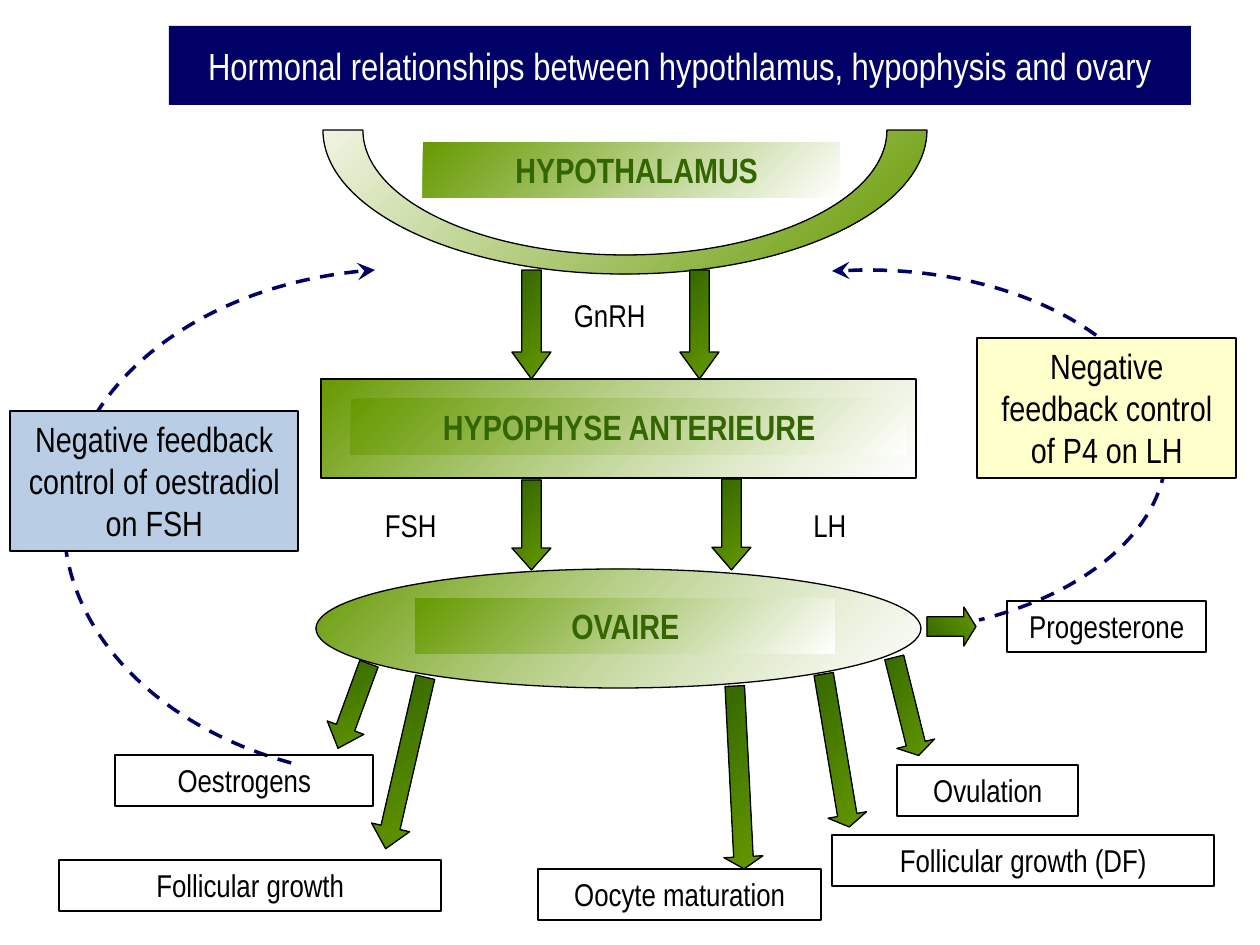
from lxml.etree import SubElement
from pptx import Presentation
from pptx.dml.color import RGBColor
from pptx.enum.dml import MSO_LINE
from pptx.enum.shapes import MSO_SHAPE
from pptx.enum.text import MSO_ANCHOR, PP_ALIGN
from pptx.oxml.ns import qn
from pptx.util import Pt

UNIT = 914400 / 126
FONT = "Arial Narrow"
COLORS = {
    "navy": "000066", "white": "FFFFFF", "black": "000000", "green": "669900",
    "dark": "336600", "cream": "FFFFCC", "blue": "B9CDE5", "mist": "F0F4E2",
}


def px(num):
    """Turn pixels into EMU."""
    return round(num * UNIT)


def rgb(name):
    """Look up a colour by name."""
    return RGBColor.from_string(COLORS[name])


def edge(shape, color="black", width=0.75):
    """Set the outline, or remove it when there is no colour."""
    shape.shadow.inherit = False
    if color:
        shape.line.color.rgb = rgb(color)
        shape.line.width = Pt(width)
    else:
        shape.line.fill.background()


def paint(shape, color):
    """Fill with one colour, or with nothing."""
    if color:
        shape.fill.solid()
        shape.fill.fore_color.rgb = rgb(color)
    else:
        shape.fill.background()


def blend(shape, first, last, alpha=100):
    """Fill with a diagonal gradient whose white stop may be see-through."""
    shape.fill.gradient()
    shape.fill.gradient_angle = 315
    for stop, name in zip(shape.fill.gradient_stops, (first, last)):
        stop.color.rgb = rgb(name)
    for node in shape._element.spPr.iter(qn("a:srgbClr")):
        if alpha < 100 and node.get("val") == COLORS["white"]:
            SubElement(node, qn("a:alpha"), val=str(alpha * 1000))


def form(slide, kind, at):
    """Add a preset shape at a pixel frame."""
    return slide.shapes.add_shape(kind, *map(px, at))


def write(shape, text, size, color="black", bold=False, pad=13, anchor=MSO_ANCHOR.TOP):
    """Write one centred paragraph into a shape."""
    frame = shape.text_frame
    frame.word_wrap = True
    frame.vertical_anchor = anchor
    frame.margin_left = px(pad)
    para = frame.paragraphs[0]
    para.alignment = PP_ALIGN.CENTER
    run = para.add_run()
    run.text = text
    run.font.name = FONT
    run.font.size = Pt(size)
    run.font.bold = bold
    run.font.color.rgb = rgb(color)


def box(slide, text, at, size=18, fill=None):
    """Add a text box with an outline."""
    shape = form(slide, MSO_SHAPE.RECTANGLE, at)
    paint(shape, fill)
    edge(shape)
    write(shape, text, size)


def note(slide, text, at):
    """Add a bare hormone name."""
    area = slide.shapes.add_textbox(*map(px, at))
    write(area, text, 18)


def organ(slide, kind, at, alpha):
    """Add an outlined organ that fades to white."""
    shape = form(slide, kind, at)
    blend(shape, "green", "white", alpha)
    edge(shape)


def label(slide, text, at, pad=13):
    """Add the name plate of an organ."""
    shape = form(slide, MSO_SHAPE.RECTANGLE, at)
    blend(shape, "green", "white")
    edge(shape, None)
    write(shape, text, 20, "dark", True, pad)


def arrow(slide, left, top, high, head, turn=0):
    """Add a green block arrow."""
    shape = form(slide, MSO_SHAPE.DOWN_ARROW, (left, top, 39, high))
    shape.adjustments[0] = 0.5
    shape.adjustments[1] = head
    shape.rotation = turn
    blend(shape, "dark", "green")
    edge(shape)


def trace(slide, start, parts, close=False):
    """Add a freeform whose parts are lines of one point or curves of three."""
    pen = slide.shapes.build_freeform(*start, scale=UNIT)
    pen.add_line_segments([spot for part in parts for spot in part], close=close)
    shape = pen.convert_to_shape()
    nodes = iter(list(shape._element.spPr.iter(qn("a:lnTo"))))
    for part in parts:
        group = [next(nodes) for _ in part]
        if len(group) == 3:
            bend = group[0].makeelement(qn("a:cubicBezTo"))
            group[0].addprevious(bend)
            for node in group:
                bend.append(node[0])
                node.getparent().remove(node)
    return shape


def bowl(slide):
    """Add the half ring of the hypothalamus."""
    shape = trace(slide, (887, 130), [
        [(887, 199), (770, 255), (625, 255)],
        [(480, 255), (363, 199), (363, 130)],
        [(323, 130)],
        [(323, 209), (457, 274), (625, 274)],
        [(793, 274), (927, 209), (927, 130)],
    ], True)
    blend(shape, "mist", "green")
    edge(shape)


def loop(slide, start, parts):
    """Add a dashed feedback curve with its arrowhead at the start."""
    shape = trace(slide, start, parts)
    paint(shape, None)
    edge(shape, "navy", 2)
    shape.line.dash_style = MSO_LINE.DASH
    line = shape._element.spPr.find(qn("a:ln"))
    SubElement(line, qn("a:headEnd"), type="stealth", w="lg", len="lg")


def main():
    """Build the slide."""
    deck = Presentation()
    deck.slide_width, deck.slide_height = px(1260), px(945)
    slide = deck.slides.add_slide(deck.slide_layouts[6])

    title = form(slide, MSO_SHAPE.RECTANGLE, (169, 26, 1022, 79))
    paint(title, "navy")
    edge(title, None)
    write(title, "Hormonal relationships between hypothlamus, hypophysis and ovary",
          21.6, "white", anchor=MSO_ANCHOR.MIDDLE)

    bowl(slide)
    label(slide, "HYPOTHALAMUS", (423, 142, 417, 56), 23)
    organ(slide, MSO_SHAPE.RECTANGLE, (321, 379, 595, 99), 63)
    label(slide, "HYPOPHYSE ANTERIEURE", (351, 399, 556, 56))
    organ(slide, MSO_SHAPE.OVAL, (316, 569, 605, 119), 60)
    label(slide, "OVAIRE", (415, 598, 420, 56))

    loop(slide, (832, 271), [
        [(843, 271), (856, 270), (867, 270)],
        [(1032, 270), (1166, 352), (1166, 452)],
        [(1166, 525), (1092, 592), (979, 620)],
    ])
    loop(slide, (375, 270), [
        [(199, 282), (64, 392), (64, 523)],
        [(64, 631), (158, 728), (295, 764)],
    ])
    box(slide, "Negative feedback control of P4 on LH", (977, 338, 259, 140), 20, "cream")
    box(slide, "Negative feedback control of oestradiol on FSH", (10, 411, 288, 140), 20, "blue")

    for spot in (
        (512, 270, 109, 0.69), (680, 270, 109, 0.69),
        (512, 480, 90, 0.56), (712, 479, 91, 0.58),
        (932, 602, 49, 0.31, 270), (334, 661, 90, 0.56, 20.1),
        (386, 675, 176, 0.56, 13), (720, 686, 183, 0.31, 357.1),
        (817, 673, 155, 0.31, 350.5), (887, 656, 101, 0.31, 346),
    ):
        arrow(slide, *spot)

    for text, left, top, wide in (
        ("GnRH", 520, 290, 179), ("FSH", 321, 500, 179), ("LH", 760, 500, 139),
    ):
        note(slide, text, (left, top, wide, 51))

    for text, left, top, wide in (
        ("Oestrogens", 115, 755, 258), ("Progesterone", 1007, 601, 199),
        ("Ovulation", 897, 765, 181), ("Follicular growth (DF)", 832, 835, 382),
        ("Oocyte maturation", 538, 869, 283), ("Follicular growth", 59, 860, 382),
    ):
        box(slide, text, (left, top, wide, 51))

    deck.save("out.pptx")


if __name__ == "__main__":
    main()
